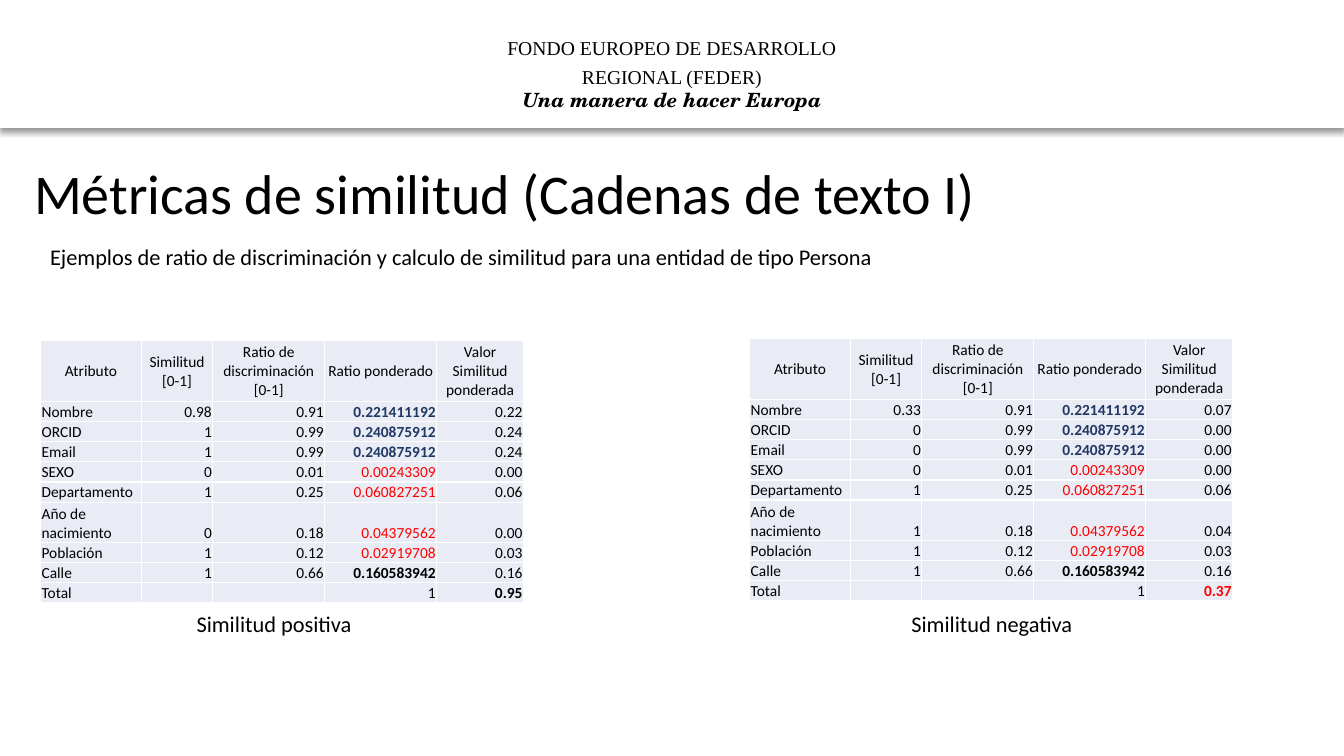
from lxml.etree import SubElement
from pptx import Presentation
from pptx.dml.color import RGBColor
from pptx.enum.shapes import MSO_SHAPE
from pptx.enum.text import MSO_ANCHOR, PP_ALIGN
from pptx.oxml.ns import qn
from pptx.util import Pt

COLORS = {
    "white": "FFFFFF",
    "black": "000000",
    "cell": "E9EBF5",
    "high": "203864",
    "low": "FF0000",
}
COLUMN_WIDTHS = [72, 51, 80, 80, 62]
LINE_HEIGHT = 14.4
HEADINGS = [
    "Atributo",
    "Similitud [0-1]",
    "Ratio de discriminación [0-1]",
    "Ratio ponderado",
    "Valor Similitud ponderada",
]
ATTRIBUTES = [
    ("Nombre", "0.91", "0.221411192", "high"),
    ("ORCID", "0.99", "0.240875912", "high"),
    ("Email", "0.99", "0.240875912", "high"),
    ("SEXO", "0.01", "0.00243309", "low"),
    ("Departamento", "0.25", "0.060827251", "low"),
    ("Año de nacimiento", "0.18", "0.04379562", "low"),
    ("Población", "0.12", "0.02919708", "low"),
    ("Calle", "0.66", "0.160583942", "black"),
]
POSITIVE = ["0.98", "1", "1", "0", "1", "0", "1", "1"]
NEGATIVE = ["0.33", "0", "0", "0", "1", "1", "1", "1"]


def rgb(color):
    return RGBColor.from_string(COLORS[color])


def write(paragraph, text, size=16, font="Calibri", color="black", bold=False,
          italic=False, align=PP_ALIGN.LEFT, spacing=None):
    paragraph.alignment = align
    if spacing:
        paragraph.line_spacing = spacing
    if not text:
        SubElement(paragraph._p, qn("a:endParaRPr"), sz=str(size * 100))
        return
    run = paragraph.add_run()
    run.text = text
    run.font.size = Pt(size)
    run.font.name = font
    run.font.bold = bold
    run.font.italic = italic
    run.font.color.rgb = rgb(color)


def add_frame(slide, left, top, width, height):
    frame = slide.shapes.add_textbox(Pt(left), Pt(top), Pt(width), Pt(height)).text_frame
    frame.word_wrap = True
    return frame


def add_shadow(band):
    effects = SubElement(band._element.spPr, qn("a:effectLst"))
    shadow = SubElement(effects, qn("a:outerShdw"), blurRad=str(Pt(4)), dist=str(Pt(3)),
                        dir=str(90 * 60000), algn="t", rotWithShape="0")
    tint = SubElement(shadow, qn("a:srgbClr"), val=COLORS["black"])
    SubElement(tint, qn("a:alpha"), val="40000")


def add_banner(slide, left, top, width, height):
    band = slide.shapes.add_shape(MSO_SHAPE.RECTANGLE, Pt(left), Pt(top), Pt(width), Pt(height))
    band.fill.solid()
    band.fill.fore_color.rgb = rgb("white")
    band.line.color.rgb = rgb("white")
    band.line.width = Pt(1)
    add_shadow(band)

    fund_width = 318
    fund = add_frame(slide, left + (width - fund_width) / 2, top + 19, fund_width, 65)
    write(fund.paragraphs[0], "FONDO EUROPEO DE DESARROLLO REGIONAL (FEDER)", size=14,
          font="Times New Roman", align=PP_ALIGN.CENTER, spacing=1.2)
    write(fund.add_paragraph(), "Una manera de hacer Europa", size=14,
          font="TeX Gyre Schola", bold=True, italic=True, align=PP_ALIGN.CENTER)


def add_heading(slide, left, top, width):
    title = add_frame(slide, left, top, width, 55.5)
    write(title.paragraphs[0], "Métricas de similitud (Cadenas de texto I)", size=40)
    subtitle = add_frame(slide, left + 11.5, top + 60.5, width - 23.5, 39)
    write(subtitle.paragraphs[0],
          "Ejemplos de ratio de discriminación y calculo de similitud "
          "para una entidad de tipo Persona")


def fill_cell(cell, text, anchor=MSO_ANCHOR.BOTTOM, **text_format):
    cell.margin_left = cell.margin_right = cell.margin_top = Pt(0.72)
    cell.margin_bottom = 0
    cell.vertical_anchor = anchor
    for side in ("a:lnL", "a:lnR", "a:lnT", "a:lnB"):
        border = SubElement(cell._tc.get_or_add_tcPr(), qn(side), w=str(Pt(1)))
        paint = SubElement(border, qn("a:solidFill"))
        SubElement(paint, qn("a:srgbClr"), val=COLORS["white"])
    cell.fill.solid()
    cell.fill.fore_color.rgb = rgb("cell")
    write(cell.text_frame.paragraphs[0], text, size=11, **text_format)


def add_similarity_table(slide, left, top, similarities, total_color):
    row_lines = [3] + [2 if name.startswith("Año") else 1 for name, *_ in ATTRIBUTES] + [1]
    table = slide.shapes.add_table(
        len(row_lines), len(COLUMN_WIDTHS), Pt(left), Pt(top),
        Pt(sum(COLUMN_WIDTHS)), Pt(sum(row_lines) * LINE_HEIGHT)).table
    table.first_row = table.horz_banding = False
    for column, width in zip(table.columns, COLUMN_WIDTHS):
        column.width = Pt(width)
    for row, lines in zip(table.rows, row_lines):
        row.height = Pt(lines * LINE_HEIGHT)

    for column, heading in enumerate(HEADINGS):
        fill_cell(table.cell(0, column), heading, MSO_ANCHOR.MIDDLE, align=PP_ALIGN.CENTER)

    rows = []
    total = 0
    for (name, ratio, weight, color), similarity in zip(ATTRIBUTES, similarities):
        value = float(similarity) * float(weight)
        total += value
        weight_format = {"color": color, "bold": color != "low"}
        rows.append(([name, similarity, ratio, weight, f"{value:.2f}"], {3: weight_format}))
    total_format = {"color": total_color, "bold": True}
    rows.append((["Total", "", "", "1", f"{total:.2f}"], {4: total_format}))

    for row, (texts, formats) in enumerate(rows, 1):
        for column, text in enumerate(texts):
            align = PP_ALIGN.RIGHT if column else PP_ALIGN.LEFT
            fill_cell(table.cell(row, column), text, align=align, **formats.get(column, {}))


def add_example(slide, left, table_left, table_top, similarities, caption, total_color):
    add_similarity_table(slide, table_left, table_top, similarities, total_color)
    label = add_frame(slide, left, 432, 357, 39)
    write(label.paragraphs[0], caption, align=PP_ALIGN.CENTER)


def main():
    presentation = Presentation()
    presentation.slide_width = Pt(960)
    presentation.slide_height = Pt(540)
    slide = presentation.slides.add_slide(presentation.slide_layouts[6])
    add_banner(slide, 0, 0, 960, 91)
    add_heading(slide, 17.25, 109.5, 926)
    add_example(slide, 17.25, 29, 243.5, POSITIVE, "Similitud positiva", "black")
    add_example(slide, 530, 535.5, 242, NEGATIVE, "Similitud negativa", "low")
    presentation.save("out.pptx")


if __name__ == "__main__":
    main()
